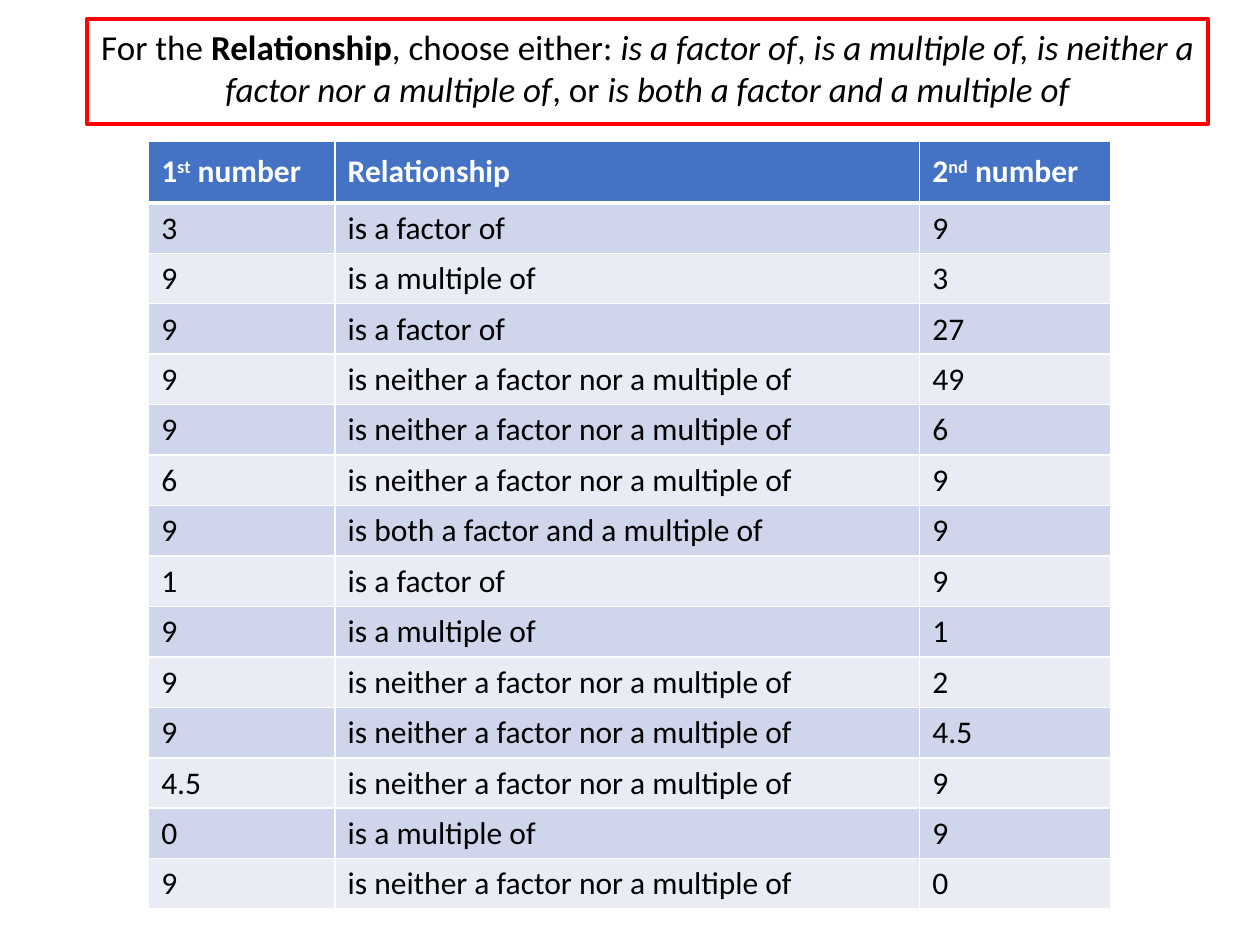
from lxml.etree import SubElement
from pptx import Presentation
from pptx.dml.color import RGBColor
from pptx.enum.text import MSO_ANCHOR, MSO_AUTO_SIZE, PP_ALIGN
from pptx.oxml.ns import qn
from pptx.util import Inches, Pt

COLORS = {
    "text": "000000", "white": "FFFFFF", "outline": "FF0000",
    "header": "4472C4", "odd_row": "CFD5EA", "even_row": "E9EBF5",
}
FONT = "Calibri"

# Each run is (text, style), where style is "", "bold", "italic" or "super".
INSTRUCTION = [
    ("For the ", ""), ("Relationship", "bold"), (", choose either: ", ""),
    ("is a factor of", "italic"), (", ", ""),
    ("is a multiple of, is neither a factor nor a multiple of", "italic"),
    (", or ", ""), ("is both a factor and a multiple of", "italic"),
]
HEADERS = [
    [("1", ""), ("st", "super"), (" number", "")],
    [("Relationship", "")],
    [("2", ""), ("nd", "super"), (" number", "")],
]
FACTOR = "is a factor of"
MULTIPLE = "is a multiple of"
NEITHER = "is neither a factor nor a multiple of"
BOTH = "is both a factor and a multiple of"
ROWS = [
    ("3", FACTOR, "9"), ("9", MULTIPLE, "3"), ("9", FACTOR, "27"),
    ("9", NEITHER, "49"), ("9", NEITHER, "6"), ("6", NEITHER, "9"),
    ("9", BOTH, "9"), ("1", FACTOR, "9"), ("9", MULTIPLE, "1"),
    ("9", NEITHER, "2"), ("9", NEITHER, "4.5"), ("4.5", NEITHER, "9"),
    ("0", MULTIPLE, "9"), ("9", NEITHER, "0"),
]
COLUMN_WIDTHS = (1.48, 4.64, 1.52)
HEADER_HEIGHT, ROW_HEIGHT = 0.49, 0.4


def rgb(name):
    return RGBColor.from_string(COLORS[name])


def write(frame, runs, size, color="text", bold=False, align=PP_ALIGN.LEFT):
    para = frame.paragraphs[0]
    para.alignment = align
    for text, style in runs:
        span = para.add_run()
        span.text = text
        font = span.font
        font.name, font.size = FONT, Pt(size)
        font.color.rgb = rgb(color)
        font.bold = bold or style == "bold"
        font.italic = style == "italic"
        if style == "super":
            span._r.get_or_add_rPr().set("baseline", "30000")


def set_borders(cell, top=1, bottom=1):
    """Draw white cell borders; widths are in points."""
    properties = cell._tc.get_or_add_tcPr()
    for tag, width in (("lnL", 1), ("lnR", 1), ("lnT", top), ("lnB", bottom)):
        line = SubElement(properties, qn(f"a:{tag}"), w=str(Pt(width)))
        fill = SubElement(line, qn("a:solidFill"))
        SubElement(fill, qn("a:srgbClr"), val=COLORS["white"])


def add_instruction(page):
    box = page.shapes.title
    box.left, box.top = Inches(0.69), Inches(0.15)
    box.width, box.height = Inches(8.9), Inches(0.77)
    box.line.color.rgb = rgb("outline")
    box.line.width = Pt(2.25)
    frame = box.text_frame
    frame.word_wrap = True
    frame.auto_size = MSO_AUTO_SIZE.SHAPE_TO_FIT_TEXT
    frame.vertical_anchor = MSO_ANCHOR.TOP
    write(frame, INSTRUCTION, 20, align=PP_ALIGN.CENTER)


def add_relationship_table(page):
    content = [HEADERS] + [[[(text, "")] for text in row] for row in ROWS]
    height = HEADER_HEIGHT + ROW_HEIGHT * len(ROWS)
    table = page.shapes.add_table(
        len(content), len(COLUMN_WIDTHS), Inches(1.18), Inches(1.12),
        Inches(sum(COLUMN_WIDTHS)), Inches(height)).table
    for column, width in zip(table.columns, COLUMN_WIDTHS):
        column.width = Inches(width)
    for index, cells in enumerate(content):
        is_header = index == 0
        table.rows[index].height = Inches(HEADER_HEIGHT if is_header else ROW_HEIGHT)
        fill = "header" if is_header else "odd_row" if index % 2 else "even_row"
        for column, runs in enumerate(cells):
            cell = table.cell(index, column)
            set_borders(cell, top=3 if index == 1 else 1, bottom=3 if is_header else 1)
            cell.fill.solid()
            cell.fill.fore_color.rgb = rgb(fill)
            cell.vertical_anchor = MSO_ANCHOR.MIDDLE
            write(cell.text_frame, runs, 18,
                  color="white" if is_header else "text", bold=is_header)


def main():
    deck = Presentation()
    deck.slide_width, deck.slide_height = Inches(10), Inches(7.5)
    page = deck.slides.add_slide(deck.slide_layouts.get_by_name("Title Only"))
    add_relationship_table(page)
    add_instruction(page)
    deck.save("out.pptx")


if __name__ == "__main__":
    main()
